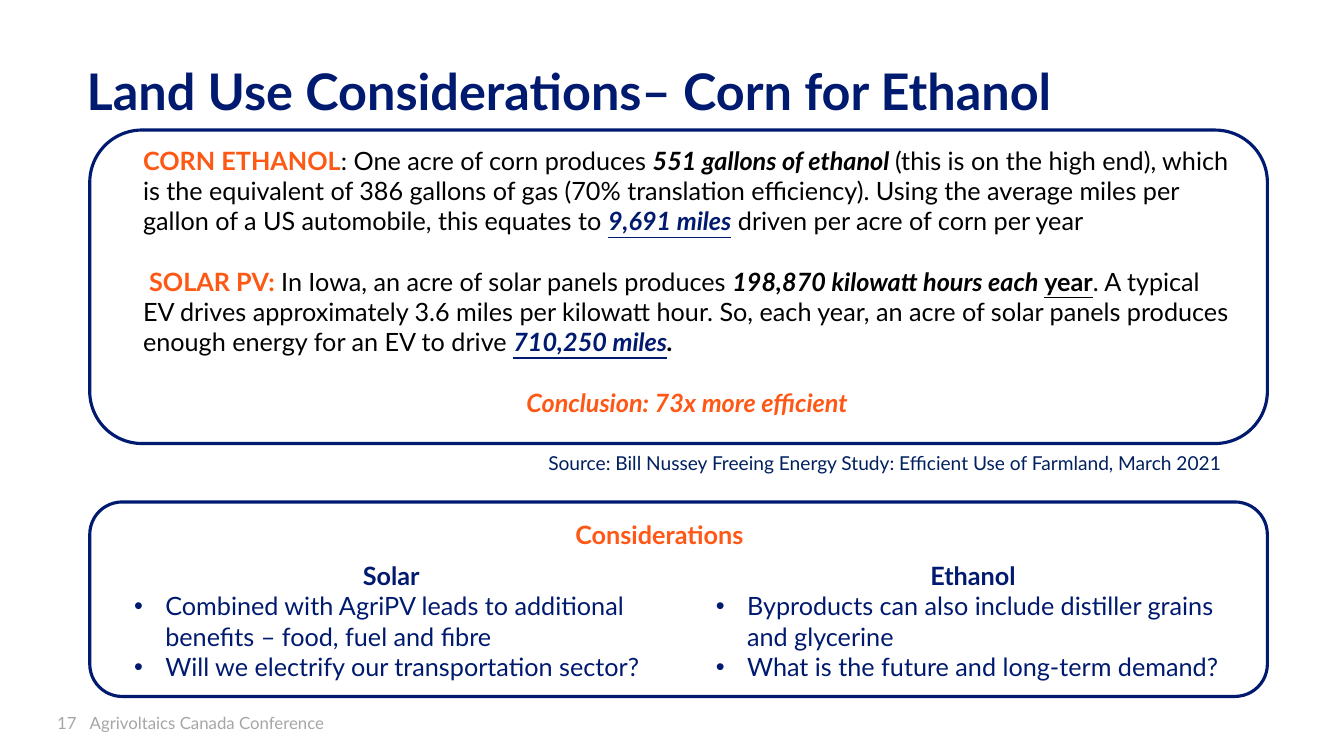
from dataclasses import dataclass

from lxml.etree import SubElement
from pptx import Presentation
from pptx.dml.color import RGBColor
from pptx.enum.shapes import MSO_SHAPE as Shape
from pptx.enum.text import MSO_ANCHOR as Anchor, MSO_AUTO_SIZE as Fit, PP_ALIGN as Align
from pptx.oxml.ns import qn
from pptx.util import Inches, Pt

FONT = "Lato"
NAVY, BLACK, WHITE = "001A70", "000000", "FFFFFF"
CORAL, ORANGE = "FE5815", "FE5716"
GRAY, SLATE = "A6A6A6", "002060"
LINE = 21.6  # one line of 18 pt text, in points
INSET = (0.1, 0.05, 0.1, 0.05)


@dataclass
class Run:
    text: str
    hue: str = BLACK
    look: str = ""  # any of b, i, u
    size: float = 18


@dataclass
class Para:
    runs: list[Run]
    align: Align = Align.LEFT
    before: float = 0
    lead: float = 1.0
    bullet: bool = False


@dataclass
class Column:
    slot: int
    left: float
    head: str
    items: list[str]


def color(hue: str) -> RGBColor:
    return RGBColor.from_string(hue)


def apply(item, values: dict) -> None:
    for name, value in values.items():
        setattr(item, name, value)


def place(shape, left: float, top: float, width: float, height: float) -> None:
    apply(shape, {"left": Inches(left), "top": Inches(top),
                  "width": Inches(width), "height": Inches(height)})


def mark(para, bullet: bool) -> None:
    """Give the paragraph a hanging bullet, or clear an inherited one."""
    props = para._p.get_or_add_pPr()
    hang = Inches(0.31) if bullet else 0
    props.set("marL", str(hang))
    props.set("indent", str(-hang))
    if bullet:
        SubElement(props, qn("a:buFont"), typeface="Arial")
        SubElement(props, qn("a:buChar"), char="•")
    else:
        SubElement(props, qn("a:buNone"))


def write(shape, paras: list[Para], anchor: Anchor = Anchor.TOP,
          inset: tuple = INSET) -> None:
    frame = shape.text_frame
    left, top, right, bottom = map(Inches, inset)
    apply(frame, {"word_wrap": True, "auto_size": Fit.NONE,
                  "vertical_anchor": anchor, "margin_left": left,
                  "margin_top": top, "margin_right": right,
                  "margin_bottom": bottom})
    for n, spec in enumerate(paras):
        para = frame.add_paragraph() if n else frame.paragraphs[0]
        mark(para, spec.bullet)
        apply(para, {"alignment": spec.align, "line_spacing": spec.lead,
                     "space_before": Pt(spec.before), "space_after": Pt(0)})
        for part in spec.runs:
            run = para.add_run()
            run.text = part.text
            apply(run.font, {"name": FONT, "size": Pt(part.size),
                             "bold": "b" in part.look,
                             "italic": "i" in part.look,
                             "underline": "u" in part.look})
            run.font.color.rgb = color(part.hue)


def label(slide, area: tuple, paras: list[Para], **kw) -> None:
    box = slide.shapes.add_textbox(0, 0, 0, 0)
    place(box, *area)
    write(box, paras, **kw)


def panel(slide, top: float, height: float) -> None:
    """Draw a rounded frame behind the text."""
    box = slide.shapes.add_shape(Shape.ROUNDED_RECTANGLE, 0, 0, 0, 0)
    place(box, 0.89, top, 11.68, height)
    box.shadow.inherit = False
    box.fill.solid()
    box.fill.fore_color.rgb = color(WHITE)
    box.line.color.rgb = color(NAVY)
    box.line.width = Pt(2.25)
    slide.shapes.title._element.addprevious(box._element)


STUDY = [
    Para([
        Run("CORN ETHANOL", CORAL, "b"),
        Run(": One acre of corn produces "),
        Run("551 gallons of ethanol ", look="bi"),
        Run("(this is on the high end), which is the equivalent of 386 gallons "
            "of gas (70% translation efficiency). Using the average miles per "
            "gallon of a US automobile, this equates to "),
        Run("9,691 miles", NAVY, "biu"),
        Run(" driven per acre of corn per year"),
    ]),
    Para([
        Run(" SOLAR PV: ", CORAL, "b"),
        Run("In Iowa, an acre of solar panels produces "),
        Run("198,870 kilowatt hours each ", look="bi"),
        Run("year", look="bu"),
        Run(". A typical EV drives approximately 3.6 miles per kilowatt hour. "
            "So, each year, an acre of solar panels produces enough energy for "
            "an EV to drive "),
        Run("710,250 miles", NAVY, "biu"),
        Run(".", look="bi"),
    ], before=LINE),
    Para([Run("Conclusion: 73x more efficient", ORANGE, "bi")],
         Align.CENTER, before=LINE),
]

COLUMNS = [
    Column(1, 1.23, "Solar", [
        "Combined with AgriPV leads to additional benefits – food, fuel and fibre",
        "Will we electify our transportation sector?".replace("electify", "electrify"),
    ]),
    Column(2, 7, "Ethanol", [
        "Byproducts can also include distiller grains and glycerine",
        "What is the future and long-term demand?",
    ]),
]


def main() -> None:
    deck = Presentation()
    apply(deck, {"slide_width": Inches(13.33), "slide_height": Inches(7.5)})
    slide = deck.slides.add_slide(deck.slide_layouts.get_by_name("Two Content"))

    panel(slide, 1.29, 3.11)
    panel(slide, 4.98, 1.93)

    title = slide.shapes.title
    place(title, 0.76, 0.61, 11.42, 1.45)
    write(title, [Para([Run("Land Use Considerations– Corn for Ethanol",
                            NAVY, "b", 36)], lead=0.9)])

    label(slide, (1.32, 1.39, 10.99, 2.83), STUDY)
    label(slide, (5.34, 4.45, 7.07, 0.35), [Para([Run(
        "Source: Bill Nussey Freeing Energy Study: Efficient Use of Farmland, "
        "March 2021", SLATE, size=13.7)], lead=0.9)])
    label(slide, (0.42, 5.1, 12.24, 0.4),
          [Para([Run("Considerations", ORANGE, "b")], Align.CENTER)])

    for col in COLUMNS:
        body = slide.placeholders[col.slot]
        place(body, col.left, 5.51, 5.3, 1.31)
        write(body, [Para([Run(col.head, NAVY, "b")], Align.CENTER)]
              + [Para([Run(item, NAVY)], bullet=True) for item in col.items])

    for left, width, align, text in (
        (0.42, 0.34, Align.RIGHT, "17"),
        (0.89, 5.97, Align.LEFT, "Agrivoltaics Canada Conference"),
    ):
        label(slide, (left, 6.97, width, 0.4),
              [Para([Run(text, GRAY, size=12)], align)],
              anchor=Anchor.MIDDLE, inset=(0, 0, 0, 0))

    deck.save("out.pptx")


if __name__ == "__main__":
    main()
